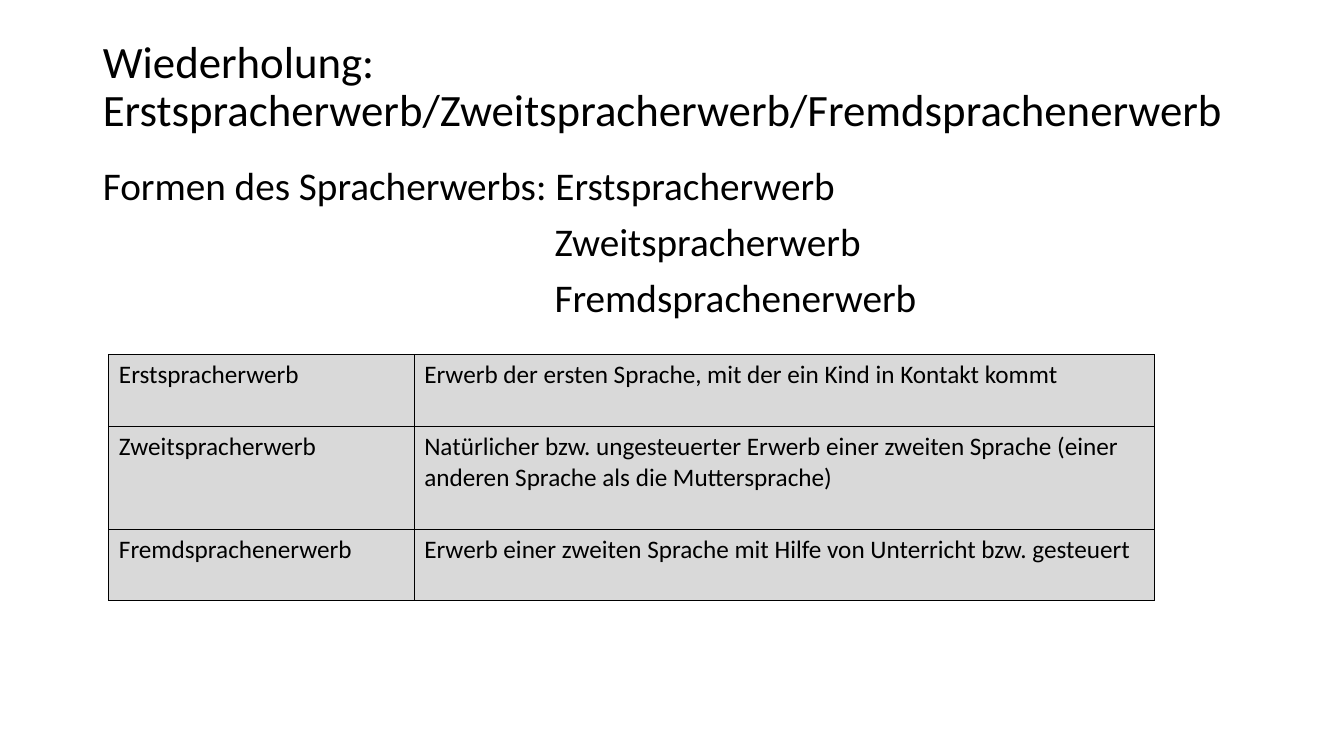
from lxml.etree import SubElement
from pptx import Presentation
from pptx.dml.color import RGBColor
from pptx.enum.text import MSO_ANCHOR, MSO_AUTO_SIZE, PP_ALIGN
from pptx.oxml import parse_xml
from pptx.oxml.ns import nsdecls, qn
from pptx.util import Inches, Pt

COLORS = {"text": "000000", "cell": "D9D9D9", "border": "000000"}
FONT = "Calibri"

HEADING = "Wiederholung: Erstspracherwerb/Zweitspracherwerb/Fremdsprachenerwerb"
# Each line with its indent in inches
ACQUISITION_FORMS = [
    ("Formen des Spracherwerbs: Erstspracherwerb", 0),
    ("Zweitspracherwerb", 4.48),
    ("Fremdsprachenerwerb", 4.48),
]
# Term, definition and row height in inches
DEFINITIONS = [
    ("Erstspracherwerb",
     "Erwerb der ersten Sprache, mit der ein Kind in Kontakt kommt", 0.71),
    ("Zweitspracherwerb",
     "Natürlicher bzw. ungesteuerter Erwerb einer zweiten Sprache "
     "(einer anderen Sprache als die Muttersprache)", 1.02),
    ("Fremdsprachenerwerb",
     "Erwerb einer zweiten Sprache mit Hilfe von Unterricht bzw. gesteuert", 0.71),
]
TERM_SHARE = 0.292


def place(part, box):
    part.left, part.top, part.width, part.height = (Inches(n) for n in box)


def add_run(paragraph, text, size):
    run = paragraph.add_run()
    run.text = text
    run.font.name = FONT
    run.font.size = Pt(size)
    run.font.color.rgb = RGBColor.from_string(COLORS["text"])


def fill_title(heading, box):
    place(heading, box)
    frame = heading.text_frame
    frame.auto_size = MSO_AUTO_SIZE.NONE
    frame.vertical_anchor = MSO_ANCHOR.MIDDLE
    paragraph = frame.paragraphs[0]
    paragraph.alignment = PP_ALIGN.LEFT
    paragraph.line_spacing = 0.9
    add_run(paragraph, HEADING, 32)


def fill_forms(forms, box):
    place(forms, box)
    frame = forms.text_frame
    frame.auto_size = MSO_AUTO_SIZE.NONE
    for number, (text, indent) in enumerate(ACQUISITION_FORMS):
        paragraph = frame.add_paragraph() if number else frame.paragraphs[0]
        paragraph.line_spacing = 0.9
        paragraph.space_before = Pt(10)
        # Indent without a bullet
        properties = paragraph._p.get_or_add_pPr()
        properties.set("marL", str(Inches(indent)))
        properties.set("indent", "0")
        SubElement(properties, qn("a:buNone"))
        add_run(paragraph, text, 28)


def add_borders(cell):
    properties = cell._tc.get_or_add_tcPr()
    for position, side in enumerate("LRTB"):
        properties.insert(position, parse_xml(
            f'<a:ln{side} {nsdecls("a")} w="{Pt(1)}"><a:solidFill>'
            f'<a:srgbClr val="{COLORS["border"]}"/></a:solidFill></a:ln{side}>'))


def add_definitions(slide, box):
    left, top, width, height = box
    table = slide.shapes.add_table(
        len(DEFINITIONS), 2, Inches(left), Inches(top),
        Inches(width), Inches(height)).table
    table.first_row = False
    table.horz_banding = False
    table.columns[0].width = Inches(width * TERM_SHARE)
    table.columns[1].width = Inches(width * (1 - TERM_SHARE))
    for row, (term, definition, row_height) in zip(table.rows, DEFINITIONS):
        row.height = Inches(row_height)
        for cell, text in zip(row.cells, (term, definition)):
            cell.fill.solid()
            cell.fill.fore_color.rgb = RGBColor.from_string(COLORS["cell"])
            add_borders(cell)
            add_run(cell.text_frame.paragraphs[0], text, 18)


def main():
    presentation = Presentation()
    presentation.slide_width = Inches(13.33)
    presentation.slide_height = Inches(7.5)
    slide = presentation.slides.add_slide(presentation.slide_layouts[1])

    # Heading
    fill_title(slide.shapes.title, (0.92, 0.4, 11.5, 0.95))
    # Forms of language acquisition
    fill_forms(slide.placeholders[1], (0.92, 1.6, 11.5, 5.15))
    # Definitions
    add_definitions(slide, (1.08, 3.52, 10.37, 2.44))

    presentation.save("out.pptx")


if __name__ == "__main__":
    main()
